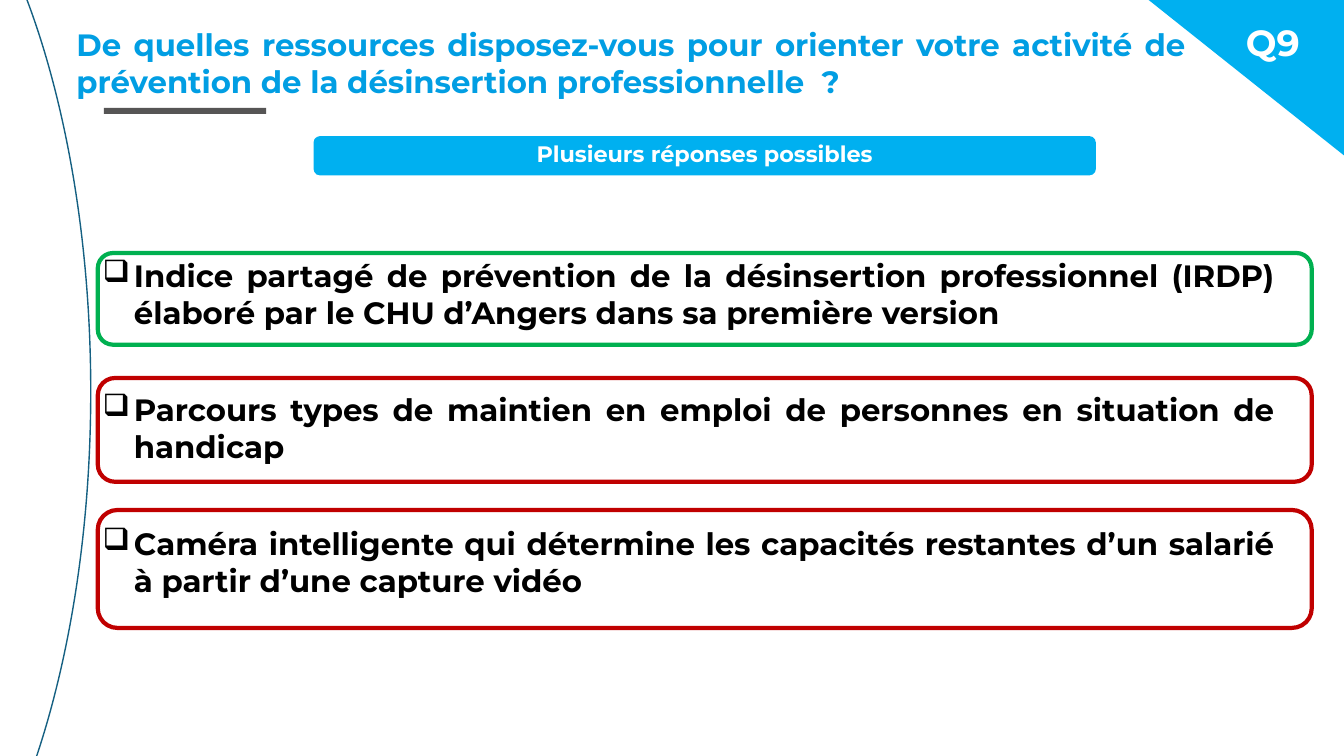
from lxml.etree import SubElement
from pptx import Presentation
from pptx.dml.color import RGBColor
from pptx.enum.shapes import MSO_SHAPE
from pptx.enum.text import MSO_ANCHOR, PP_ALIGN
from pptx.oxml.ns import qn
from pptx.util import Inches, Pt

WHITE = RGBColor(0xFF, 0xFF, 0xFF)
BLACK = RGBColor(0x00, 0x00, 0x00)
SKY = RGBColor(0x00, 0xB0, 0xF0)
TITLE_BLUE = RGBColor(0x01, 0x9E, 0xE3)
ARC_BLUE = RGBColor(0x15, 0x60, 0x82)
GRAY = RGBColor(0x56, 0x55, 0x55)
RED = RGBColor(0xC0, 0x00, 0x00)
GREEN = RGBColor(0x00, 0xB0, 0x50)

FONT = "Montserrat"
BULLET = "❑"
BULLET_INDENT = Inches(0.31)

TITLE = (
    "De quelles ressources disposez-vous pour orienter votre activité "
    "de prévention de la désinsertion professionnelle  ?"
)
ANSWERS = [
    "Indice partagé de prévention de la désinsertion professionnel (IRDP) "
    "élaboré par le CHU d’Angers dans sa première version",
    "Parcours types de maintien en emploi de personnes en situation de handicap",
    "Caméra intelligente qui détermine les capacités restantes d’un salarié "
    "à partir d’une capture vidéo",
]
FRAMES = [(2.51, 0.91, GREEN), (3.75, 1.03, RED), (5.06, 1.17, RED)]


def add_figure(page, kind, left, top, width, height, fill=None, line=None, weight=1):
    shape = page.shapes.add_shape(
        kind, Inches(left), Inches(top), Inches(width), Inches(height)
    )
    shape.shadow.inherit = False
    if fill is None:
        shape.fill.background()
    else:
        shape.fill.solid()
        shape.fill.fore_color.rgb = fill
    if line is None:
        shape.line.fill.background()
    else:
        shape.line.color.rgb = line
        shape.line.width = Pt(weight)
    return shape


def add_text_box(page, left, top, width, height):
    return page.shapes.add_textbox(
        Inches(left), Inches(top), Inches(width), Inches(height)
    )


def add_bullet(para):
    properties = para._p.get_or_add_pPr()
    properties.set("marL", str(BULLET_INDENT))
    properties.set("indent", str(-BULLET_INDENT))
    SubElement(properties, qn("a:buChar")).set("char", BULLET)


def write_text(box, texts, size=22, color=BLACK, align=PP_ALIGN.JUSTIFY,
               spacing=1.0, gap=0, bullet=False, anchor=MSO_ANCHOR.TOP):
    frame = box.text_frame
    frame.word_wrap = True
    frame.vertical_anchor = anchor
    for index, text in enumerate(texts):
        para = frame.add_paragraph() if index else frame.paragraphs[0]
        para.alignment = align
        para.line_spacing = spacing
        if index:
            para.space_before = Pt(gap)
        if bullet:
            add_bullet(para)
        span = para.add_run()
        span.text = text
        span.font.name = FONT
        span.font.size = Pt(size)
        span.font.bold = True
        span.font.color.rgb = color


def add_decor(page):
    arc = add_figure(page, MSO_SHAPE.ARC, -4.42, -2.12, 5.32, 12.01, line=ARC_BLUE)
    arc.adjustments[0] = 178.34
    arc.adjustments[1] = 35.86
    add_figure(page, MSO_SHAPE.RECTANGLE, 1.03, 1.07, 1.61, 0.06, fill=GRAY)


def add_header(page):
    write_text(add_text_box(page, 0.66, 0.21, 11.2, 1.12), [TITLE], color=TITLE_BLUE)
    corner = add_figure(
        page, MSO_SHAPE.RIGHT_TRIANGLE, 11.38, -0.01, 1.96, 1.56, fill=SKY
    )
    corner.rotation = 180
    label = {"color": WHITE, "align": PP_ALIGN.CENTER, "spacing": 0.9}
    write_text(add_text_box(page, 11.66, 0.2, 1.93, 0.57), ["Q9"], size=26, **label)
    banner = add_figure(
        page, MSO_SHAPE.ROUNDED_RECTANGLE, 3.11, 1.35, 7.76, 0.39, fill=SKY
    )
    write_text(banner, ["Plusieurs réponses possibles"], size=16,
               anchor=MSO_ANCHOR.MIDDLE, **label)


def add_answers(page):
    for top, height, color in reversed(FRAMES):
        add_figure(page, MSO_SHAPE.ROUNDED_RECTANGLE, 0.97, top, 12.04, height,
                   fill=WHITE, line=color, weight=3)
    box = add_text_box(page, 0.92, 2.5, 11.82, 3.93)
    write_text(box, ANSWERS, gap=42.8, bullet=True)


def main():
    deck = Presentation()
    deck.slide_width = Inches(13.33)
    deck.slide_height = Inches(7.5)
    page = deck.slides.add_slide(deck.slide_layouts[6])
    add_decor(page)
    add_answers(page)
    add_header(page)
    deck.save("out.pptx")


if __name__ == "__main__":
    main()
